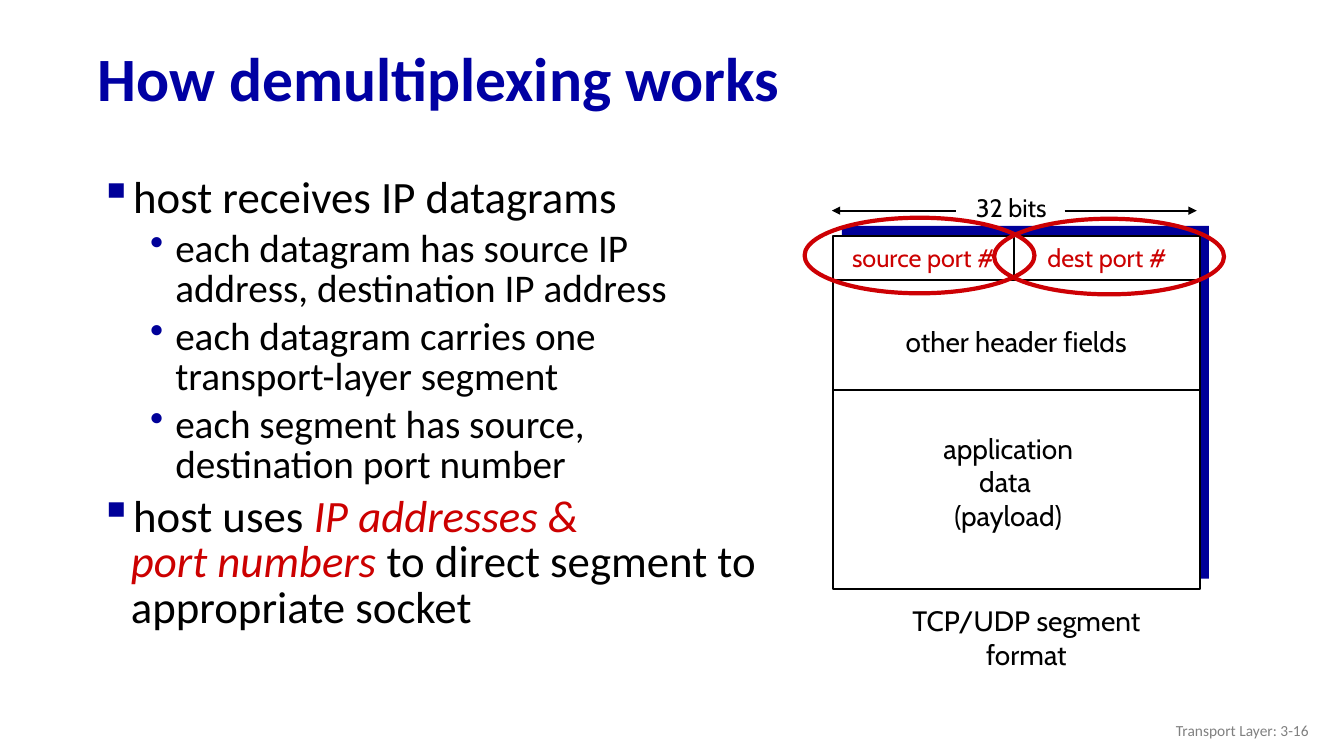
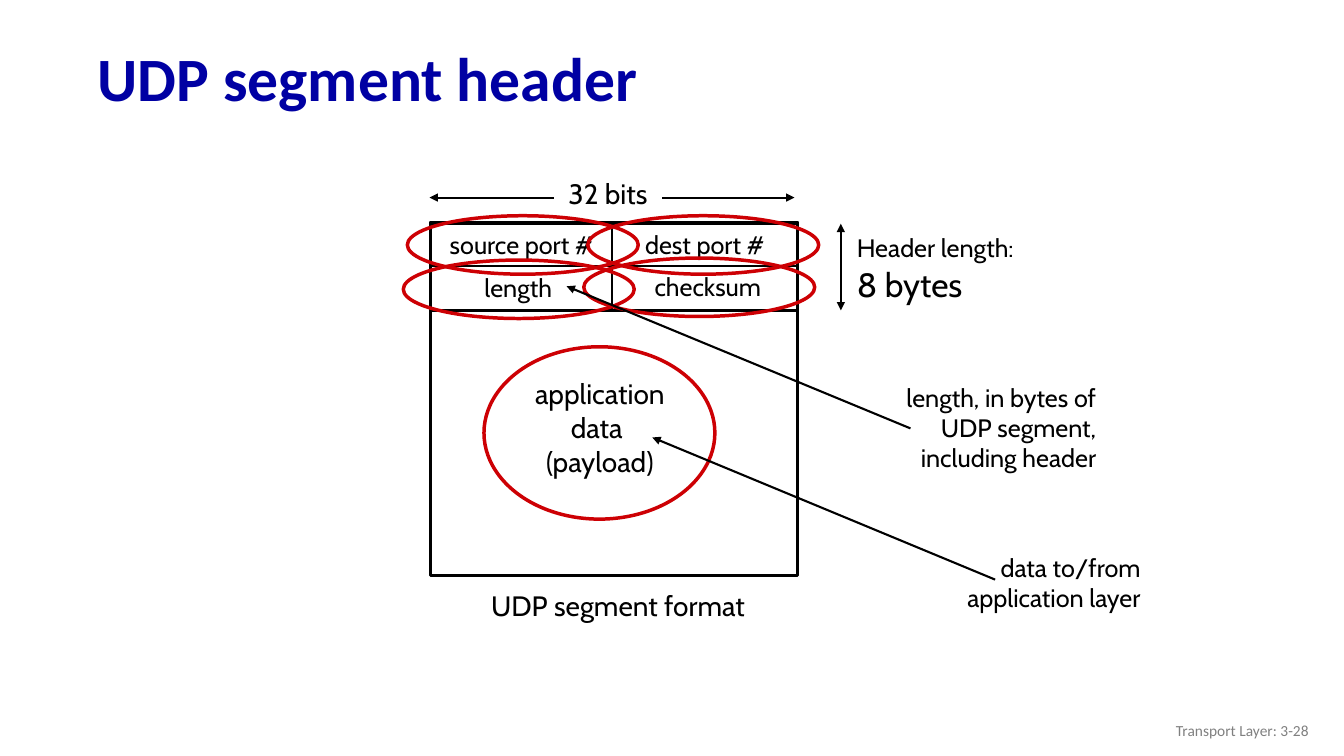
from lxml import etree
from pptx import Presentation
from pptx import util as u
from pptx.dml.color import RGBColor
from pptx.enum import shapes, text
from pptx.oxml import ns

BLACK = RGBColor(0, 0, 0)
WHITE = RGBColor(255, 255, 255)
NAVY = RGBColor(0, 0, 0x99)
TITLE = RGBColor(0, 0, 0xA3)
RED = RGBColor(0xCC, 0, 0)
RING = RGBColor(0xCD, 0, 4)
GREY = RGBColor(0x80, 0x80, 0x80)
LEFT, MID, RIGHT = text.PP_ALIGN.LEFT, text.PP_ALIGN.CENTER, text.PP_ALIGN.RIGHT
RECT, OVAL = shapes.MSO_SHAPE.RECTANGLE, shapes.MSO_SHAPE.OVAL

WIDE, HIGH = 3.64, 3.5
HALF = 1.8
LEVELS = [
    dict(size=32, mark="▪", left=0.31, hang=0.31),
    dict(size=28, mark="•", left=0.75, hang=0.25),
]
BODY = [
    (0, [("host receives IP datagrams", {})]),
    (1, [("each datagram has source IP address, destination IP address", {})]),
    (1, [("each datagram carries one transport-layer segment", {})]),
    (1, [("each segment has source, destination port number", {})]),
    (0, [("host uses ", {}),
         ("IP addresses & \nport numbers", dict(color=RED, italic=True)),
         (" to direct segment to appropriate socket", {})]),
]
PAYLOAD = "application\ndata \n(payload)"

DEMUX = dict(
    title="How demultiplexing works", page="3-16", at=(8.26, 2.34),
    shade=True, edge=1.5, ring=3, ink=RED,
    rows=[0.44, 1.53], split=0.44,
    labels=[("32 bits", 1.77, -0.48, 18), ("other header fields", 1.82, 0.83, 20),
            (PAYLOAD, 1.74, 1.89, 20), ("TCP/UDP segment format", 1.92, 3.6, 20)],
    rings=[(-0.28, -0.18, 2.28, 0.75), (1.6, -0.17, 2.28, 0.75)],
)
UDP = dict(
    title="UDP segment header", page="3-28", at=(4.27, 2.21),
    shade=False, edge=2.75, ring=2.5, ink=BLACK,
    rows=[0.43, 0.87], split=0.87,
    labels=[("32 bits", 1.76, -0.51, 20), ("length", 0.87, 0.44, 18),
            ("checksum", 2.75, 0.43, 18), (PAYLOAD, 1.68, 1.48, 20),
            ("UDP segment format", 1.86, 3.58, 20)],
    rings=[(-0.23, -0.07, 2.29, 0.58), (1.56, -0.07, 2.29, 0.58),
           (-0.27, 0.37, 2.29, 0.58), (1.52, 0.35, 2.29, 0.58),
           (0.53, 1.23, 2.29, 1.71)],
)
PORTS = [("source port #", 0.9, 0.02, 18), ("dest port #", 2.72, 0.02, 18)]
NOTES = [
    ("length, in bytes of UDP segment, including header",
     (8.34, 3.74, 2.63, 1), (9.03, 4.25), (5.62, 2.84)),
    ("data to/from application layer",
     (8.78, 5.43, 2.63, 0.71), (9.87, 5.75), (6.47, 4.34)),
]


def inches(*nums):
    return [u.Inches(n) for n in nums]


def add_run(para, words, size, color=BLACK, font="Calibri", **style):
    for i, part in enumerate(words.split("\n")):
        if i:
            para.add_line_break()
        run = para.add_run()
        run.text = part
        run.font.color.rgb = color
        look = dict(size=u.Pt(size), name=font, **style)
        for key, val in look.items():
            setattr(run.font, key, val)


def add_box(slide, at, wrap=True, anchor=text.MSO_ANCHOR.TOP):
    frame = slide.shapes.add_textbox(*inches(*at)).text_frame
    frame.word_wrap = wrap
    frame.vertical_anchor = anchor
    return frame


def add_text(slide, words, at, size, align=LEFT, wrap=True,
             anchor=text.MSO_ANCHOR.TOP, space=1.0, **style):
    frame = add_box(slide, at, wrap, anchor)
    for i, line in enumerate(words.split("\n")):
        para = frame.add_paragraph() if i else frame.paragraphs[0]
        para.alignment = align
        para.line_spacing = space
        add_run(para, line, size, **style)
    return frame


def add_shape(slide, kind, at, fill=None, line=None, width=1):
    shape = slide.shapes.add_shape(kind, *inches(*at))
    shape.shadow.inherit = False
    if fill is None:
        shape.fill.background()
    else:
        shape.fill.solid()
        shape.fill.fore_color.rgb = fill
    if line is None:
        shape.line.fill.background()
    else:
        shape.line.color.rgb = line
        shape.line.width = u.Pt(width)


def add_line(slide, start, end, ends=()):
    link = slide.shapes.add_connector(
        shapes.MSO_CONNECTOR.STRAIGHT, *inches(*start, *end))
    link.line.color.rgb = BLACK
    link.line.width = u.Pt(1.5)
    stroke = link.line._get_or_add_ln()
    for end in ends:
        etree.SubElement(stroke, ns.qn("a:" + end), type="triangle")
    etree.SubElement(link._element.spPr, ns.qn("a:effectLst"))


def add_body(slide):
    frame = add_box(slide, (0.89, 1.71, 6.72, 3.05))
    for i, (depth, runs) in enumerate(BODY):
        para = frame.add_paragraph() if i else frame.paragraphs[0]
        level = LEVELS[depth]
        para.level = depth
        para.line_spacing = 0.85
        para.space_before = u.Pt(level["size"] * 0.2)
        props = para._p.get_or_add_pPr()
        props.set("marL", str(u.Inches(level["left"])))
        props.set("indent", str(-u.Inches(level["hang"])))
        tint = etree.SubElement(props, ns.qn("a:buClr"))
        etree.SubElement(tint, ns.qn("a:srgbClr"), val=str(NAVY))
        etree.SubElement(props, ns.qn("a:buChar"), char=level["mark"])
        for words, style in runs:
            add_run(para, words, level["size"], **style)


def add_segment(slide, spec):
    left, top = spec["at"]

    def spot(x, y):
        return left + x, top + y

    if spec["shade"]:
        add_shape(slide, RECT, (*spot(0.09, -0.1), WIDE, HIGH), NAVY)
    add_shape(slide, RECT, (left, top, WIDE, HIGH), WHITE, BLACK, spec["edge"])
    for y in spec["rows"]:
        add_line(slide, spot(0, y), spot(WIDE, y))
    add_line(slide, spot(HALF, 0), spot(HALF, spec["split"]))
    for x, tip in [(2.3, 3.61), (1.22, -0.01)]:
        add_line(slide, spot(x, -0.25), spot(tip, -0.25), ["tailEnd"])
    for group, ink in [(PORTS, spec["ink"]), (spec["labels"], BLACK)]:
        for words, x, y, size in group:
            tall = 0.1 + size / 60 * (words.count("\n") + 1)
            add_text(slide, words, (*spot(x - 1.5, y), 3, tall), size, MID,
                     wrap=False, font="Cabin", color=ink)
    for x, y, w, h in spec["rings"]:
        add_shape(slide, OVAL, (*spot(x, y), w, h), None, RING, spec["ring"])


def add_notes(slide):
    for words, at, start, end in NOTES:
        add_text(slide, words, at, 18, RIGHT, font="Cabin")
        add_line(slide, start, end, ["tailEnd"])
    add_line(slide, (8.34, 2.22), (8.34, 3.08), ["headEnd", "tailEnd"])
    frame = add_text(slide, "Header length:", (8.4, 2.17, 1.94, 0.91), 18, font="Cabin")
    add_run(frame.paragraphs[0], " 8 bytes", 24, font="Cabin")


def add_slide(deck, spec):
    slide = deck.slides.add_slide(deck.slide_layouts[6])
    middle = text.MSO_ANCHOR.MIDDLE
    add_text(slide, spec["title"], (0.87, 0.32, 12.14, 0.98), 44,
             anchor=middle, space=0.9, color=TITLE, bold=True)
    add_segment(slide, spec)
    add_text(slide, "Transport Layer: " + spec["page"], (10.08, 7.05, 3, 0.4), 11,
             RIGHT, anchor=middle, color=GREY)
    return slide


def main():
    deck = Presentation()
    deck.slide_width, deck.slide_height = inches(13.33, 7.5)
    add_body(add_slide(deck, DEMUX))
    add_notes(add_slide(deck, UDP))
    deck.save("out.pptx")


if __name__ == "__main__":
    main()
